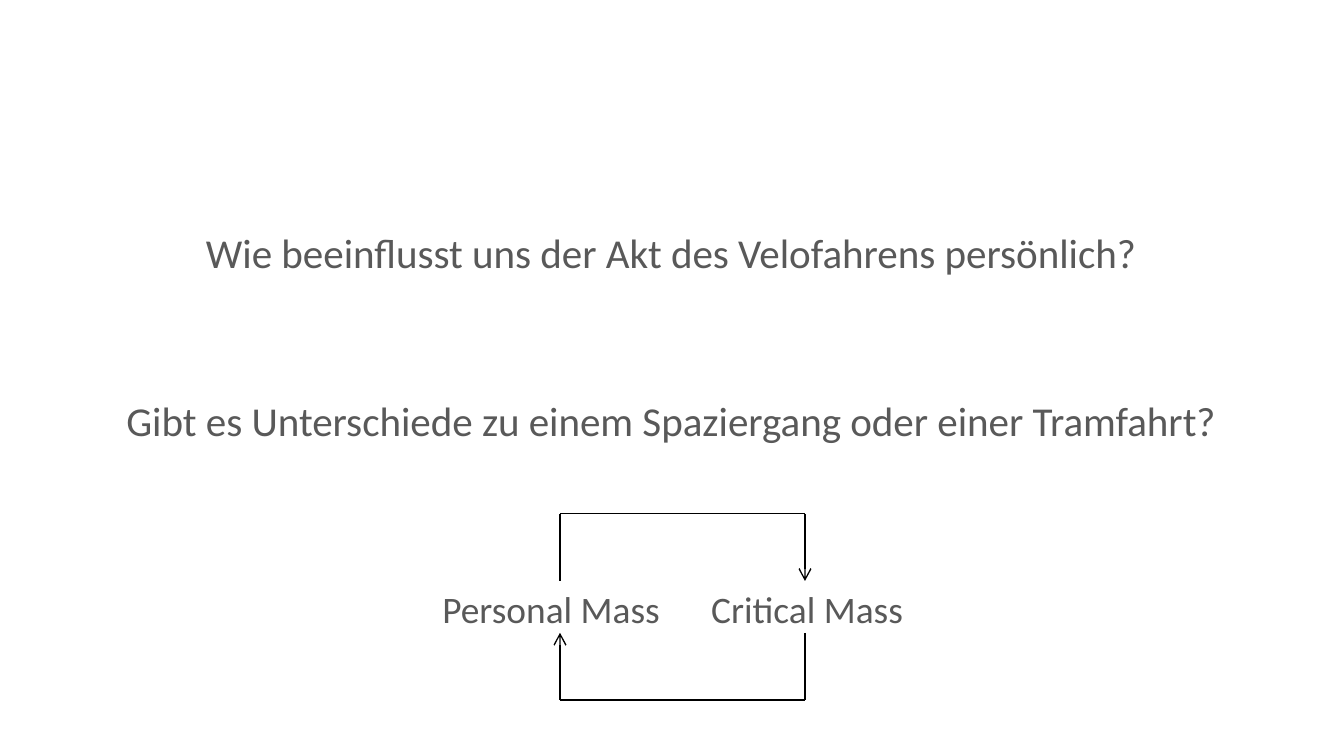
from dataclasses import dataclass

from lxml.etree import SubElement
from pptx import Presentation
from pptx.dml.color import RGBColor
from pptx.enum.shapes import MSO_CONNECTOR
from pptx.enum.text import PP_ALIGN
from pptx.oxml.ns import qn
from pptx.util import Emu, Pt

PX = 9525  # EMU per px, 96 px to the inch


@dataclass(frozen=True)
class Theme:
    font: str = "Calibri"
    text: RGBColor = RGBColor(0x59, 0x59, 0x59)
    line: RGBColor = RGBColor(0, 0, 0)
    question_size: int = 22
    cycle_size: int = 20
    line_width: float = 0.75


theme = Theme()


def add_centred_text(slide, box, paragraphs, size, top_inset=10, gap=0):
    frame = slide.shapes.add_textbox(*[Emu(v * PX) for v in box]).text_frame
    frame.word_wrap = True
    frame.margin_left = frame.margin_right = frame.margin_bottom = Emu(10 * PX)
    frame.margin_top = Emu(top_inset * PX)
    frame.text = "\n".join(paragraphs)
    for index, paragraph in enumerate(frame.paragraphs):
        paragraph.alignment = PP_ALIGN.CENTER
        paragraph.line_spacing = 1.15
        paragraph.space_before = Pt(gap if index else 0)
        properties = paragraph._p.get_or_add_pPr()
        properties.set("marL", str(12 * PX))
        properties.set("indent", "0")
        for run in paragraph.runs:
            run.font.name = theme.font
            run.font.size = Pt(size)
            run.font.color.rgb = theme.text


def add_line(slide, start, end, arrow=False):
    connector = slide.shapes.add_connector(
        MSO_CONNECTOR.STRAIGHT, *[Emu(v * PX) for v in (*start, *end)])
    connector.line.color.rgb = theme.line
    connector.line.width = Pt(theme.line_width)
    if arrow:
        SubElement(connector.line._get_or_add_ln(), qn("a:tailEnd"), type="arrow")
    SubElement(connector._element.spPr, qn("a:effectLst"))


presentation = Presentation()
presentation.slide_width = Emu(960 * PX)
presentation.slide_height = Emu(540 * PX)
slide = presentation.slides.add_slide(presentation.slide_layouts[6])

# Questions
questions = [
    "Wie beeinflusst uns der Akt des Velofahrens persönlich?",
    "Gibt es Unterschiede zu einem Spaziergang oder einer Tramfahrt?",
]
add_centred_text(slide, (13, 103, 921, 349), questions, theme.question_size,
                 top_inset=54, gap=60)

# The two masses
add_centred_text(slide, (174, 404, 601, 57), ["Personal Mass \tCritical Mass"],
                 theme.cycle_size)

# Cycle: over the top to Critical Mass, back underneath to Personal Mass
personal_x, critical_x = 400, 575
for from_x, to_x, word_y, outer_y in (
    (personal_x, critical_x, 415, 367),
    (critical_x, personal_x, 452, 500),
):
    add_line(slide, (from_x, word_y), (from_x, outer_y))
    add_line(slide, (from_x, outer_y), (to_x, outer_y))
    add_line(slide, (to_x, outer_y), (to_x, word_y), arrow=True)

presentation.save("out.pptx")
